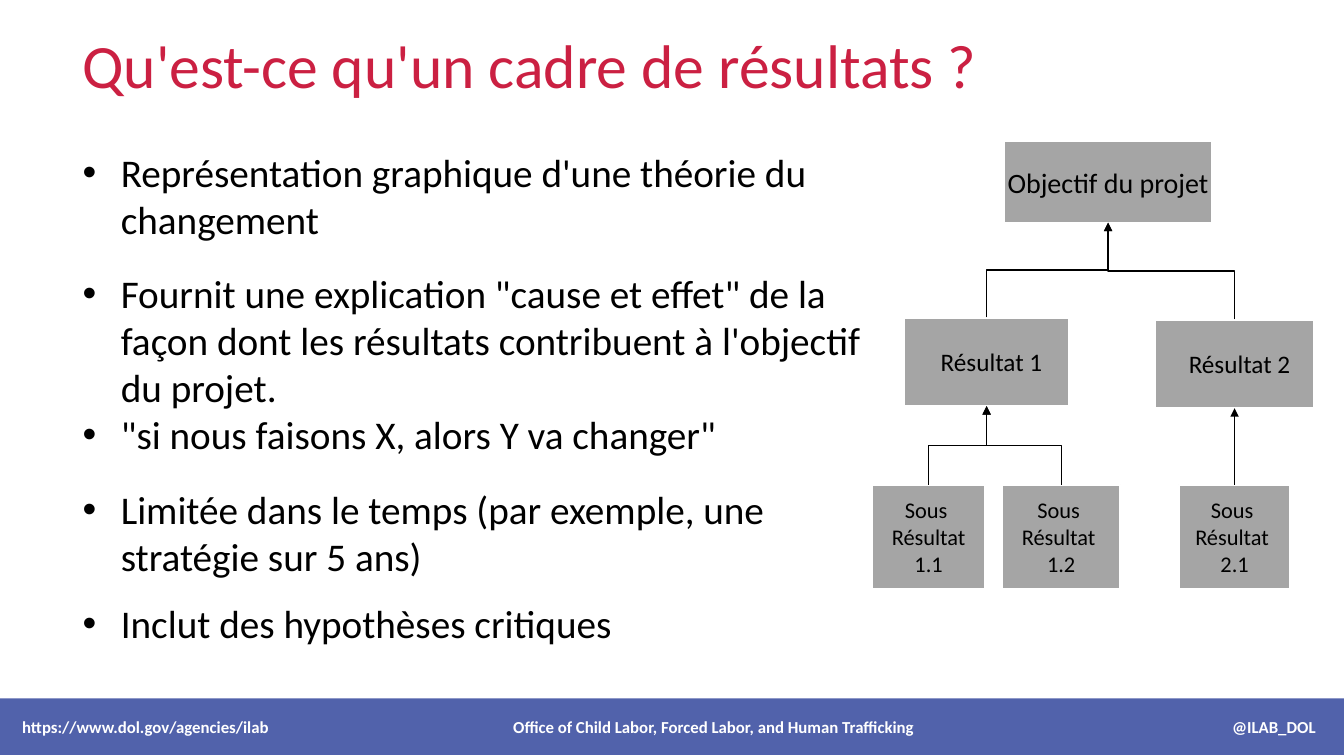
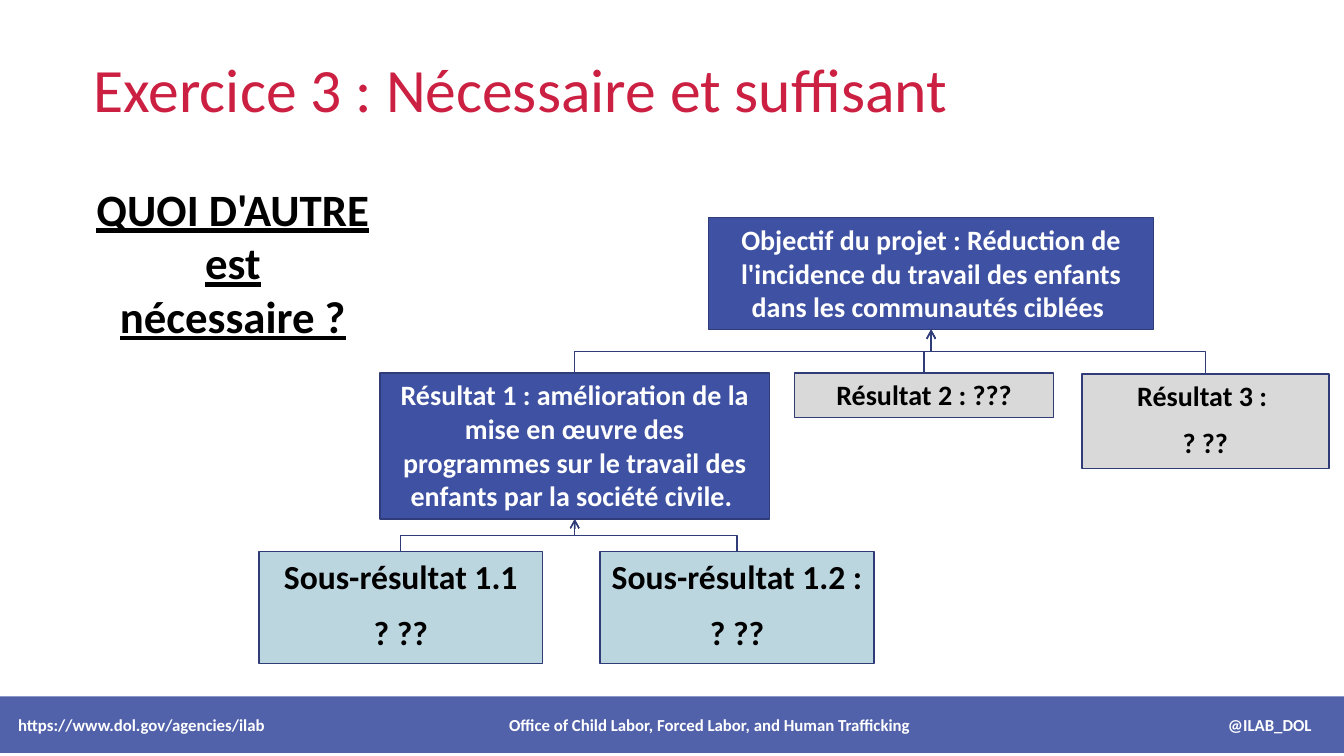
from lxml.etree import SubElement
from pptx import Presentation
from pptx.dml.color import RGBColor
from pptx.enum.shapes import MSO_CONNECTOR as CXN, MSO_SHAPE as SHAPE
from pptx.enum.text import MSO_ANCHOR as ANCHOR, PP_ALIGN as ALIGN
from pptx.oxml.ns import qn
from pptx.util import Inches, Pt

FONT = "Calibri"
COLORS = {"title": "CB2042", "blue": "3F51A2", "navy": "2F3C78", "grey": "A5A5A5",
          "silver": "D9D9D9", "ice": "BCD6E0", "black": "000000", "white": "FFFFFF"}
RGB = {name: RGBColor.from_string(value) for name, value in COLORS.items()}


def write(sp, text, size, color="black", bold=False, align=ALIGN.LEFT, anchor=ANCHOR.TOP):
    """Fill a shape with wrapped, uniformly formatted text."""
    tf = sp.text_frame
    tf.word_wrap = True
    tf.vertical_anchor = anchor
    tf.text = text
    for p in tf.paragraphs:
        p.alignment = align
        for r in p.runs:
            r.font.name, r.font.size, r.font.bold = FONT, Pt(size), bold
            r.font.color.rgb = RGB[color]
    return tf


def join(s, child, parent, color, head):
    """Draw an arrow from the top of child to the bottom of parent."""
    x1, y1 = child.left + child.width // 2, child.top
    x2, y2 = parent.left + parent.width // 2, parent.top + parent.height
    dx, rise = x2 - x1, y1 - y2
    bent = abs(dx) > Inches(0.02)
    c = s.shapes.add_connector(CXN.ELBOW if bent else CXN.STRAIGHT, x1, y1, x2, y2)
    c.begin_connect(child, 0)
    c.end_connect(parent, 2)
    c.line.color.rgb = RGB[color]
    c.line.width = Pt(1)
    sp_pr = c.element.spPr
    if bent:  # turn the elbow so that it leaves and arrives vertically
        c.left, c.top = (x1 + x2 - rise) // 2, (y1 + y2 - abs(dx)) // 2
        c.width, c.height = rise, abs(dx)
        xfrm = sp_pr.find(qn("a:xfrm"))
        xfrm.set("rot", str((90 if dx > 0 else 270) * 60000))
        xfrm.set("flipH", "1" if dx > 0 else "0")
        xfrm.set("flipV", "1")
    SubElement(sp_pr.find(qn("a:ln")), qn("a:tailEnd"), type=head)
    SubElement(sp_pr, qn("a:effectLst"))


prs = Presentation()
prs.slide_width, prs.slide_height = Inches(13.33), Inches(7.5)

# Titles and footer bands: title text, title box, band left and top
FOOTER = ("https://www.dol.gov/agencies/ilab\t"
          "Office of Child Labor, Forced Labor, and Human Trafficking\t@ILAB_DOL")
pages = [
    ("Qu'est-ce qu'un cadre de résultats ?", (0.72, 0.21, 9.66, 0.84), 0, 6.93),
    ("Exercice 3 : Nécessaire et suffisant", (0.83, 0.56, 10.06, 0.62), -0.04, 6.91),
]
for title, place, left, top in pages:
    s = prs.slides.add_slide(prs.slide_layouts[6])
    sp = s.shapes.add_textbox(*map(Inches, place))
    write(sp, title, 44, "title", anchor=ANCHOR.MIDDLE)

    band = s.shapes.add_shape(SHAPE.RECTANGLE, *map(Inches, (left, top, 13.37, 0.56)))
    band.shadow.inherit = False
    band.fill.solid()
    band.fill.fore_color.rgb = RGB["blue"]
    SubElement(band.element.spPr.find(".//" + qn("a:srgbClr")), qn("a:alpha"), val="90000")
    band.line.fill.background()
    tf = write(band, FOOTER, 12, "white", bold=True, anchor=ANCHOR.MIDDLE)
    tf.margin_left = Inches(0.22)
    tabs = SubElement(tf.paragraphs[0]._p.get_or_add_pPr(), qn("a:tabLst"))
    for pos, kind in ((6.86, "ctr"), (12.83, "r")):
        SubElement(tabs, qn("a:tab"), pos=str(Inches(pos)), algn=kind)

framework, exercise = prs.slides

# Bulleted list: text and space before
bullets = [
    ("Représentation graphique d'une théorie du changement", 0),
    ("Fournit une explication \"cause et effet\" de la façon dont les résultats "
     "contribuent à l'objectif du projet.", 19.5),
    ("\"si nous faisons X, alors Y va changer\"", 0),
    ("Limitée dans le temps (par exemple, une stratégie sur 5 ans)", 19.5),
    ("Inclut des hypothèses critiques", 14.5),
]
sp = framework.shapes.add_textbox(*map(Inches, (0.72, 1.42, 8.02, 5.36)))
tf = write(sp, "\n".join(text for text, gap in bullets), 28)
for p, (text, gap) in zip(tf.paragraphs, bullets):
    p.space_before = Pt(gap)
    p_pr = p._p.get_or_add_pPr()
    p_pr.set("marL", str(Inches(0.38)))
    p_pr.set("indent", str(-Inches(0.38)))
    SubElement(p_pr, qn("a:buFont"), typeface="Arial")
    SubElement(p_pr, qn("a:buChar"), char="•")

# Question of the exercise
sp = exercise.shapes.add_textbox(*map(Inches, (0.83, 1.75, 2.96, 1.72)))
tf = write(sp, "QUOI D'AUTRE est nécessaire ?", 32, bold=True, align=ALIGN.CENTER)
tf.paragraphs[0].runs[0].font.underline = True

# Result trees: box, text size, text, parent; the first box is the goal
framework_boxes = [
    ((9.96, 1.4, 2.06, 0.81), 20, "Objectif du projet", None),
    ((8.97, 3.15, 1.63, 0.88), 18, "Résultat 1", 0),
    ((11.46, 3.17, 1.57, 0.88), 18, "Résultat 2", 0),
    ((8.65, 4.81, 1.12, 1.03), 16, "Sous \nRésultat\n1.1", 1),
    ((9.94, 4.81, 1.17, 1.03), 16, "Sous \nRésultat \n1.2", 1),
    ((11.69, 4.81, 1.11, 1.03), 16, "Sous \nRésultat \n2.1", 2),
]
for i, (place, size, text, parent) in enumerate(framework_boxes):
    framework_boxes[i] = (place, size, text, parent, "grey")
exercise_boxes = [
    ((7.03, 2.16, 4.41, 1.11), 20, "Objectif du projet : Réduction de l'incidence du travail "
     "des enfants dans les communautés ciblées ", None, "blue"),
    ((3.77, 3.7, 3.86, 1.45), 20, "Résultat 1 : amélioration de la mise en œuvre des programmes "
     "sur le travail des enfants par la société civile. ", 0, "blue"),
    ((7.88, 3.7, 2.57, 0.44), 20, "Résultat 2 : ???", 0, "silver"),
    ((10.73, 3.71, 2.45, 0.94), 20, "Résultat 3 : \n? ??", 0, "silver"),
    ((2.57, 5.47, 2.81, 1.11), 24, "Sous-résultat 1.1\n? ??", 1, "ice"),
    ((5.95, 5.47, 2.72, 1.11), 24, "Sous-résultat 1.2 : \n? ??", 1, "ice"),
]
trees = [
    (framework, framework_boxes, "white", 1.5, "black", "triangle"),
    (exercise, exercise_boxes, "navy", 1, "navy", "arrow"),
]
for s, boxes, border, border_width, link, head in trees:
    plain = s is framework
    drawn = []
    for place, size, text, parent, fill in boxes:
        sp = s.shapes.add_shape(SHAPE.RECTANGLE, *map(Inches, place))
        sp.shadow.inherit = False
        sp.fill.solid()
        sp.fill.fore_color.rgb = RGB[fill]
        sp.line.color.rgb = RGB[border]
        sp.line.width = Pt(border_width)
        tf = write(sp, text, size, "white" if fill == "blue" else "black", not plain,
                   ALIGN.CENTER, ANCHOR.MIDDLE if plain else ANCHOR.TOP)
        if plain:
            tf.margin_left = Inches(0.1 if size == 18 else 0)
            tf.margin_right = 0
        else:
            for p in tf.paragraphs[1:]:
                p.space_before = Pt(round(size * 0.46, 1))
        drawn.append(sp)
        if parent is not None:
            join(s, sp, drawn[parent], link, head)

prs.save("out.pptx")
